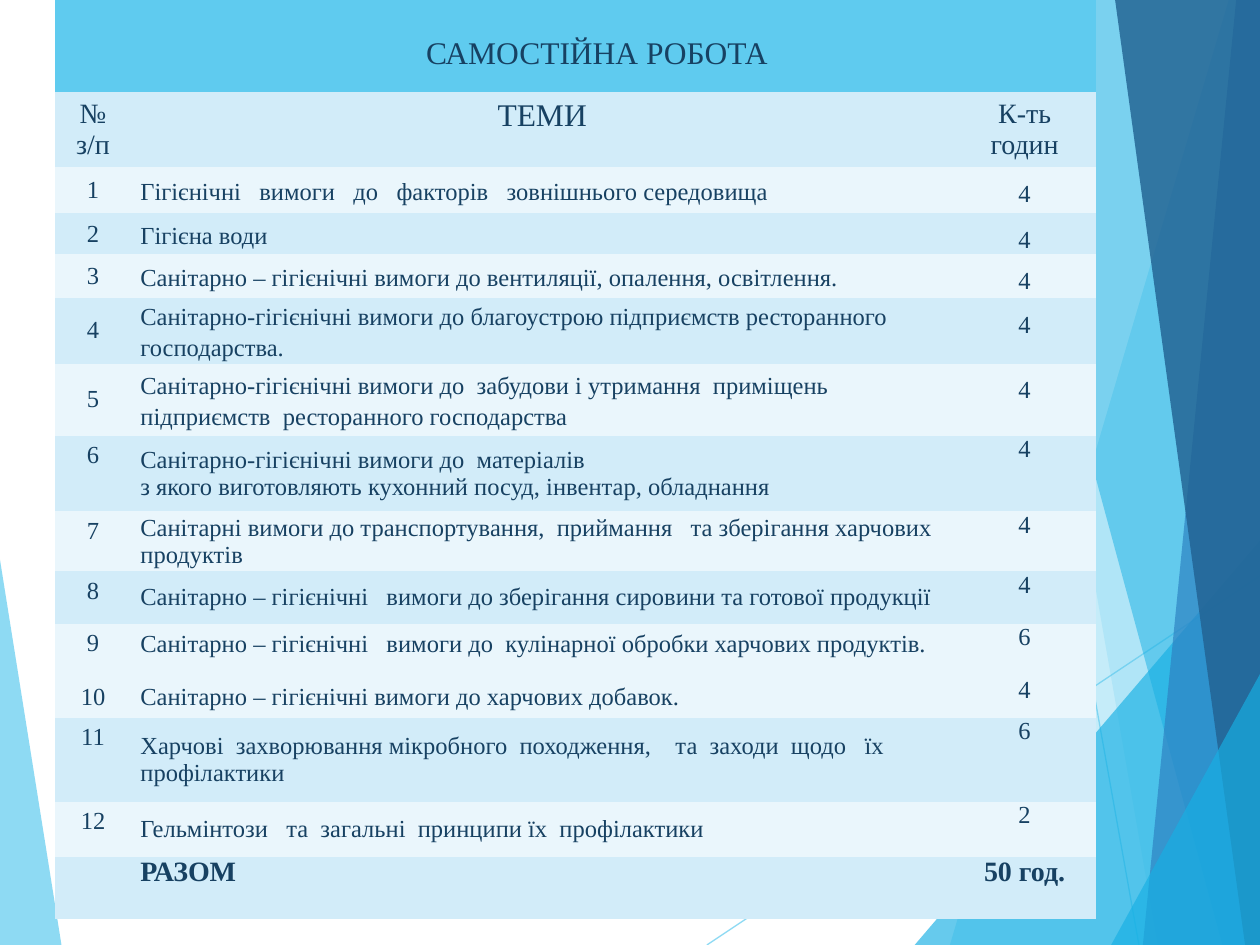
from lxml.etree import SubElement
from pptx import Presentation
from pptx.dml.color import RGBColor
from pptx.enum.shapes import MSO_CONNECTOR as Connector
from pptx.enum.text import MSO_ANCHOR as Anchor, PP_ALIGN as Align
from pptx.oxml.ns import qn
from pptx.util import Cm, Pt

FONT = "Times New Roman"
TEXT, SKY, CYAN = "174162", "5FCBEF", "17B0E4"
BANDS = ["EAF6FC", "D2ECF9"]
NO_STYLE_NO_GRID = "{2D5ABB26-0587-4C30-8999-92F81FD0307C}"


def paint(fill, colour):
    fill.solid()
    fill.fore_color.rgb = RGBColor.from_string(colour)


def set_opacity(shape, percent):
    for colour in shape.element.iter(qn("a:srgbClr")):
        SubElement(colour, qn("a:alpha"), val=str(percent * 1000))


presentation = Presentation()
presentation.slide_width, presentation.slide_height = Cm(25.4), Cm(19.05)
slide = presentation.slides.add_slide(presentation.slide_layouts[5])

# Background facets, lines first among those on the right
RIGHT, BOTTOM = 25.4, 19.05
for start, end in [((14.25, BOTTOM), (RIGHT, 11.61)), ((19.56, 0), (22.96, BOTTOM))]:
    line = slide.shapes.add_connector(Connector.STRAIGHT, *map(Cm, start + end))
    line.line.width = Pt(0.75)
    paint(line.line.fill, SKY)
    set_opacity(line, 70)
    SubElement(line.element.spPr, qn("a:effectLst"))

corner, top_corner = (RIGHT, BOTTOM), (RIGHT, 0)
facets = [
    ([(0, 11.28), (1.24, BOTTOM), (0, BOTTOM)], SKY, 70),
    ([(24.77, 0), (19.15, BOTTOM), corner, top_corner], SKY, 36),
    ([(20.02, 0), (23.34, BOTTOM), corner, top_corner], SKY, 20),
    ([(18.44, BOTTOM), (RIGHT, 10.9), corner], CYAN, 66),
    ([(19.48, 0), (24.64, BOTTOM), corner, top_corner], CYAN, 50),
    ([(24.92, 0), (23.04, BOTTOM), corner, top_corner], "2E83C3", 70),
    ([(22.48, 0), (25.1, BOTTOM), corner, top_corner], "226292", 82),
    ([(22.4, BOTTOM), (RIGHT, 13.59), corner], CYAN, 66),
]
for points, colour, opacity in facets:
    first, *others = [(Cm(x), Cm(y)) for x, y in points]
    builder = slide.shapes.build_freeform(*first)
    builder.add_line_segments(others)
    facet = builder.convert_to_shape()
    facet.shadow.inherit = False
    facet.line.fill.background()
    paint(facet.fill, colour)
    set_opacity(facet, opacity)

# Table of topics: row height, number, topic, hours
rows = [
    (2.14, "", "", ""),
    (1.51, "№ з/п", "ТЕМИ", "К-ть годин"),
    (0.93, "1", "Гігієнічні   вимоги   до   факторів   зовнішнього середовища", "4"),
    (0.83, "2", "Гігієна води", "4"),
    (0.87, "3", "Санітарно – гігієнічні вимоги до вентиляції, опалення, освітлення.", "4"),
    (1.33, "4", "Санітарно-гігієнічні вимоги до благоустрою підприємств ресторанного господарства.", "4"),
    (1.45, "5", "Санітарно-гігієнічні вимоги до  забудови і утримання  приміщень "
                "підприємств  ресторанного господарства", "4"),
    (1.53, "6", "Санітарно-гігієнічні вимоги до  матеріалів\n"
                "з якого виготовляють кухонний посуд, інвентар, обладнання", "4"),
    (1.21, "7", "Санітарні вимоги до транспортування,  приймання   та зберігання харчових продуктів", "4"),
    (1.05, "8", "Санітарно – гігієнічні   вимоги до зберігання сировини та готової продукції", "4"),
    (1.90, "9\n10", "Санітарно – гігієнічні   вимоги до  кулінарної обробки харчових продуктів.\n"
                    "Санітарно – гігієнічні вимоги до харчових добавок.", "6\n4"),
    (1.69, "11", "Харчові  захворювання мікробного  походження,    та  заходи  щодо   їх  профілактики", "6"),
    (1.11, "12", "Гельмінтози   та  загальні  принципи їх  профілактики", "2"),
    (1.25, "", "РАЗОМ", "50 год."),
]
HEADER, SPACED_ROWS, SHARED, TOTAL = 1, range(2, 7), 10, 13
NUMBER, TOPIC, HOURS = range(3)

frame = slide.shapes.add_table(len(rows), 3, Cm(1.1), Cm(-0.28), Cm(21), Cm(18.8))
table = frame.table
table.first_row = table.horz_banding = False
next(frame.element.iter(qn("a:tableStyleId"))).text = NO_STYLE_NO_GRID
for column, width in zip(table.columns, (1.55, 16.56, 2.89)):
    column.width = Cm(width)

for row_index, (height, *texts) in enumerate(rows):
    table.rows[row_index].height = Cm(height)
    for column_index, text in enumerate(texts):
        cell = table.cell(row_index, column_index)
        paint(cell.fill, BANDS[row_index % 2] if row_index else SKY)
        cell.text = text
        spaced = row_index in SPACED_ROWS
        if row_index > HEADER:
            middle = spaced if column_index == NUMBER else column_index == TOPIC and row_index != TOTAL
            cell.vertical_anchor = Anchor.MIDDLE if middle else Anchor.TOP
            if column_index != NUMBER:
                cell.margin_left = cell.margin_right = Cm(0.18)
                cell.margin_top = cell.margin_bottom = 0
        for position, paragraph in enumerate(cell.text_frame.paragraphs):
            paragraph.font.name = FONT
            paragraph.font.size = Pt(16 if row_index in (HEADER, TOTAL) else 14)
            paragraph.font.bold = row_index == TOTAL
            paragraph.font.color.rgb = RGBColor.from_string(TEXT)
            left = column_index == TOPIC and row_index > HEADER
            paragraph.alignment = Align.LEFT if left else Align.CENTER
            if spaced and column_index != NUMBER:
                paragraph.line_spacing = 1.15 if column_index == TOPIC else 1.5
            if spaced and column_index == TOPIC:
                paragraph.space_after = Pt(10)
            if row_index == SHARED and position:
                paragraph.space_before = Pt(15)
table.cell(HEADER, TOPIC).text_frame.paragraphs[0].font.size = Pt(18)
table.cell(0, 0).merge(table.cell(0, HOURS))

# Title in front of the table's top row
title = slide.shapes.title
title.left, title.top, title.width, title.height = Cm(5.66), Cm(0.53), Cm(12.75), Cm(1.03)
title.text = "САМОСТІЙНА РОБОТА"
title.text_frame.vertical_anchor = Anchor.MIDDLE
heading = title.text_frame.paragraphs[0]
heading.alignment = Align.CENTER
heading.font.name, heading.font.size = FONT, Pt(18)
heading.font.color.rgb = RGBColor.from_string(TEXT)
frame.element.addnext(title.element)

presentation.save("out.pptx")
